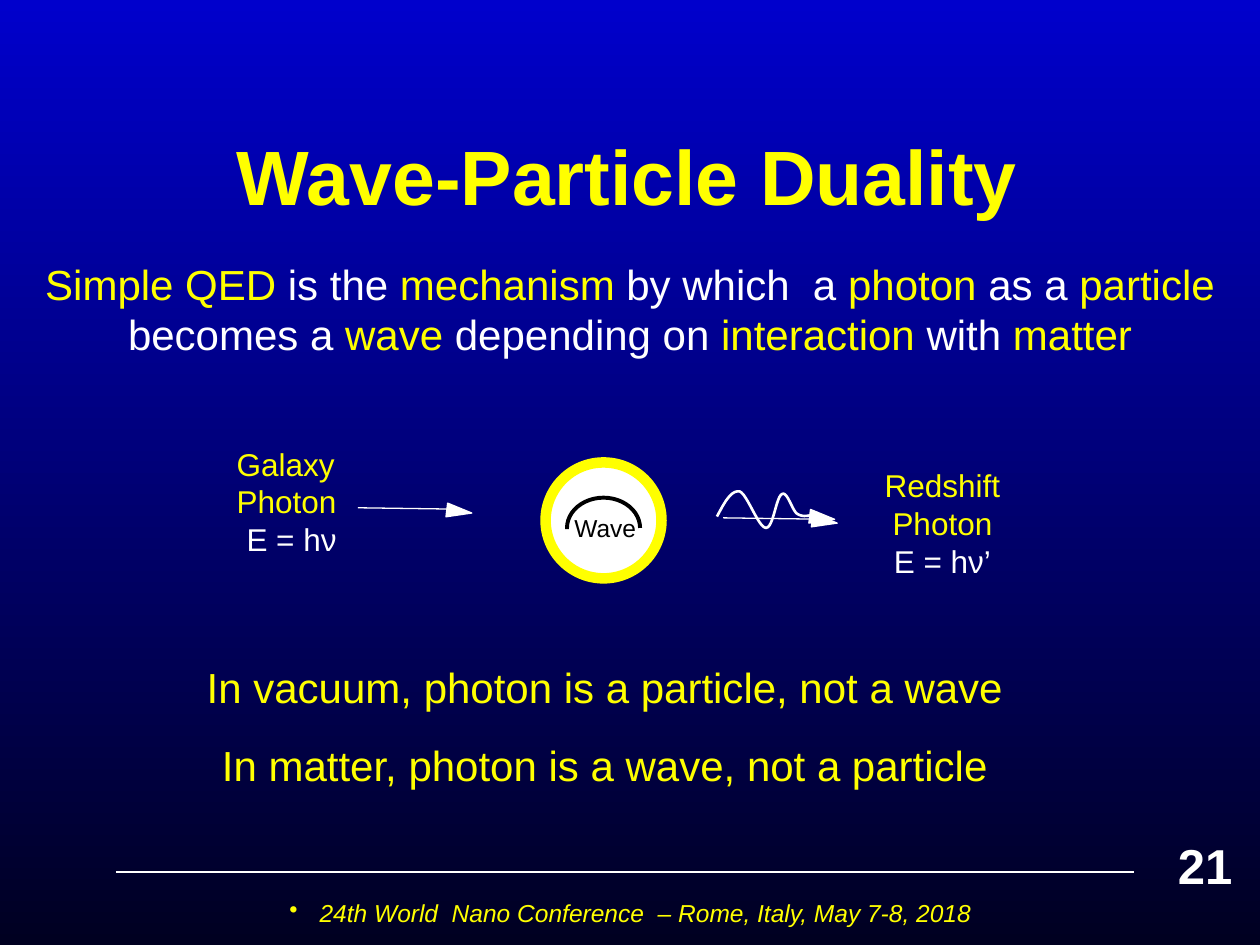
from lxml import etree
from pptx import Presentation
from pptx.dml.color import RGBColor
from pptx.enum import shapes, text
from pptx.oxml.ns import qn
from pptx.util import Inches, Pt

THEME = {
    "font": "Arial",
    "yellow": RGBColor(0xFF, 0xFF, 0x00),
    "white": RGBColor(0xFF, 0xFF, 0xFF),
    "black": RGBColor(0x00, 0x00, 0x00),
    "sky_top": RGBColor(0x00, 0x00, 0xCC),
    "sky_bottom": RGBColor(0x00, 0x00, 0x21),
    "title": Pt(44), "number": Pt(28), "body": Pt(24), "label": Pt(18), "small": Pt(14),
}
CENTER, LEFT = text.PP_ALIGN.CENTER, text.PP_ALIGN.LEFT


def write(shape, box, paragraphs, size, align=CENTER, before=0, **font_format):
    """Place a shape and fill it with paragraphs, each a list of (text, colour) runs."""
    shape.left, shape.top, shape.width, shape.height = [Inches(value) for value in box]
    frame = shape.text_frame
    frame.word_wrap = True
    frame.auto_size = text.MSO_AUTO_SIZE.NONE
    for index, runs in enumerate(paragraphs):
        paragraph = frame.add_paragraph() if index else frame.paragraphs[0]
        paragraph.alignment = align
        paragraph.space_before = Pt(before)
        for words, colour in runs:
            run = paragraph.add_run()
            run.text = words
            run.font.color.rgb = THEME[colour]
            values = {"name": THEME["font"], "size": THEME[size], "bold": False, **font_format}
            for name, value in values.items():
                setattr(run.font, name, value)
    return frame


def style(shape, fill, line, width):
    """Set fill (None for hollow), line colour and line width, without shadow."""
    shape.shadow.inherit = False
    if fill:
        shape.fill.solid()
        shape.fill.fore_color.rgb = THEME[fill]
    else:
        shape.fill.background()
    shape.line.color.rgb = THEME[line]
    shape.line.width = Pt(width)


presentation = Presentation()
presentation.slide_width, presentation.slide_height = Inches(10), Inches(7.5)
slide = presentation.slides.add_slide(presentation.slide_layouts[0])

# Background gradient, top to bottom
background = slide.background.fill
background.gradient()
background.gradient_angle = 270
for stop, position, name in zip(background.gradient_stops, (0, 1), ("sky_top", "sky_bottom")):
    stop.position = position
    stop.color.rgb = THEME[name]

# Title and statement
frame = write(slide.shapes.title, (0.73, 0.58, 8.5, 1.61),
              [[("Wave-Particle Duality", "yellow")]], "title", bold=True)
frame.vertical_anchor = text.MSO_ANCHOR.MIDDLE
statement = [
    ("Simple QED", "yellow"), (" is the ", "white"), ("mechanism", "yellow"),
    (" by which  a ", "white"), ("photon", "yellow"), (" as a ", "white"),
    ("particle", "yellow"), (" becomes a ", "white"), ("wave ", "yellow"),
    ("depending on ", "white"), ("interaction", "yellow"), (" with ", "white"),
    ("matter", "yellow"),
]
frame = write(slide.placeholders[1], (0.03, 2, 9.94, 1.25), [statement], "body", before=5)
frame.vertical_anchor = text.MSO_ANCHOR.TOP

# Atom: white disc, yellow ring, black arc
for kind, box, fill, line, width in [
    (shapes.MSO_SHAPE.OVAL, (4.32, 3.68, 0.92, 0.92), "white", "white", 2.25),
    (shapes.MSO_SHAPE.OVAL, (4.33, 3.67, 0.92, 0.92), None, "yellow", 6),
    (shapes.MSO_SHAPE.ARC, (4.5, 3.95, 0.58, 0.48), None, "black", 2.25),
]:
    shape = slide.shapes.add_shape(kind, *[Inches(value) for value in box])
    style(shape, fill, line, width)
    if kind == shapes.MSO_SHAPE.ARC:
        shape.adjustments[0], shape.adjustments[1] = 106.97, 0

# Footer rule and the two photon paths
for x1, y1, x2, y2 in [(0.92, 6.92, 9, 6.92), (2.84, 4.03, 3.55, 4.04), (5.74, 4.11, 6.45, 4.12)]:
    connector = slide.shapes.add_connector(
        shapes.MSO_CONNECTOR.STRAIGHT, Inches(x1), Inches(y1), Inches(x2), Inches(y2))
    connector.line.color.rgb = THEME["white"]
    connector.line.width = Pt(0.75)
    etree.SubElement(connector._element.spPr, qn("a:effectLst"))

# Outgoing wave: cubic curves sampled into short segments
start = (5.69, 4.1)
curves = [
    [(5.75, 3.99), (5.8, 3.89), (5.87, 3.9)],
    [(5.93, 3.92), (6.02, 4.19), (6.08, 4.19)],
    [(6.14, 4.19), (6.16, 3.93), (6.21, 3.92)],
    [(6.25, 3.9), (6.29, 4.06), (6.33, 4.08)],
    [(6.38, 4.11), (6.44, 4.09), (6.49, 4.07)],
]
builder = slide.shapes.build_freeform(Inches(start[0]), Inches(start[1]))
points, steps = [], 12
for first, second, end in curves:
    for step in range(1, steps + 1):
        t = step / steps
        points.append([
            Inches((1 - t) ** 3 * a + 3 * t * (1 - t) ** 2 * b + 3 * t * t * (1 - t) * c + t ** 3 * d)
            for a, b, c, d in zip(start, first, second, end)])
    start = end
builder.add_line_segments(points, close=False)
style(builder.convert_to_shape(), None, "white", 1.5)

# Arrowheads, pointing right
for left, top in [(3.59, 3.96), (6.47, 4.01), (6.49, 4.04)]:
    head = slide.shapes.add_shape(shapes.MSO_SHAPE.ISOSCELES_TRIANGLE,
                                  Inches(left), Inches(top), Inches(0.11), Inches(0.2))
    head.rotation = 97.1
    style(head, "white", "white", 0.75)

# Labels, conclusions and slide number
for box, paragraphs, size, options in [
    ((4.46, 4.02, 0.87, 0.34), [[("Wave", "black")]], "small", {"align": LEFT}),
    ((1.78, 3.48, 1.07, 1.01), [[("Galaxy Photon", "yellow")], [("E = hν", "white")]], "label", {}),
    ((6.75, 3.65, 1.46, 1.01),
     [[("Redshift", "yellow")], [("Photon", "yellow")], [("E = hν’", "white")]], "label", {}),
    ((-0.17, 5.2, 9.94, 1.25),
     [[("In vacuum, photon is a particle, not a wave", "yellow")],
      [("In matter, photon is a wave, not a particle", "yellow")]], "body", {"before": 16}),
    ((9.25, 6.58, 0.75, 0.57), [[("21", "white")]], "number", {"align": LEFT, "bold": True}),
]:
    frame = write(slide.shapes.add_textbox(0, 0, 0, 0), box, paragraphs, size, **options)
    frame.paragraphs[0].space_before = Pt(0)
    if size == "label":
        frame.paragraphs[0].alignment = LEFT if len(paragraphs) == 2 else CENTER

# Conference line with a bullet
frame = write(slide.shapes.add_textbox(0, 0, 0, 0), (0.17, 7.08, 9.67, 0.42),
              [[("24th World  Nano Conference  – Rome, Italy, May 7-8, 2018", "yellow")]],
              "small", italic=True)
properties = frame.paragraphs[0]._p.get_or_add_pPr()
properties.set("marL", str(Inches(0.24)))
properties.set("indent", str(-Inches(0.24)))
etree.SubElement(properties, qn("a:buChar")).set("char", "•")

presentation.save("out.pptx")
